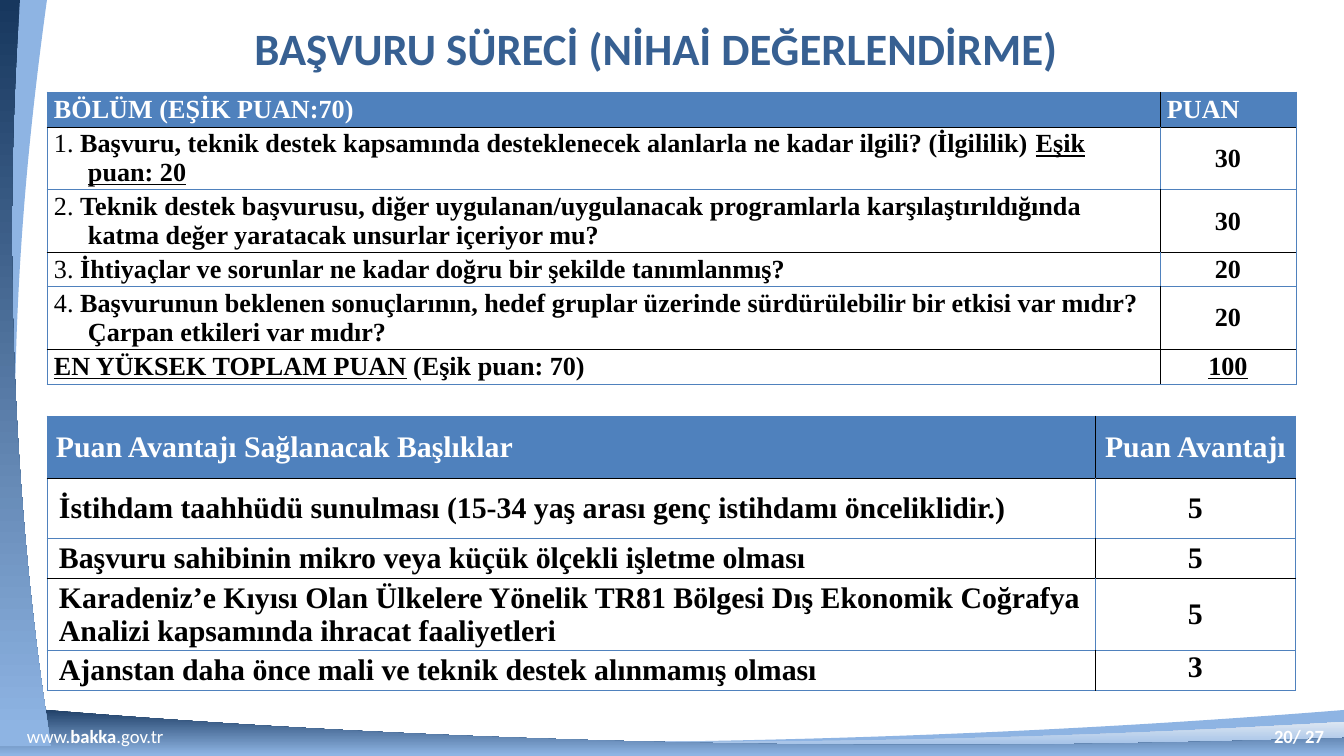
import dataclasses

import pptx
import pptx.dml.color
import pptx.enum.text
import pptx.oxml
import pptx.oxml.ns
import pptx.util

WIDE, HIGH = 1344, 756
SCALE = 9144000 / WIDE
BLUE, BLACK, WHITE = "4F81BD", "000000", "FFFFFF"
NAVY, SKY, PALE = "17375E", "8EB4E3", "DCE6F2"
SERIF, SANS = "Times New Roman", "Calibri"
ALIGN = pptx.enum.text.PP_ALIGN
ANCHOR = pptx.enum.text.MSO_ANCHOR


def emu(px: float) -> int:
    return pptx.util.Emu(round(px * SCALE))


def color(code: str) -> pptx.dml.color.RGBColor:
    return pptx.dml.color.RGBColor.from_string(code)


@dataclasses.dataclass
class Run:
    text: str
    bold: bool = True
    line: bool = False


@dataclasses.dataclass
class Style:
    size: int
    font: str
    color: str
    align: ALIGN = ALIGN.LEFT
    margin: int = 0
    indent: int = 0


@dataclasses.dataclass
class Wave:
    start: tuple
    out: tuple      # two controls and the end of the first curve
    edge: tuple     # straight corners
    back: tuple     # two controls of the curve back to the start
    stops: tuple    # (percent, colour) pairs; a single pair is solid
    angle: int = 0


@dataclasses.dataclass
class Grid:
    top: int
    cols: tuple
    rows: tuple
    pad: int
    size: int
    margin: int
    indent: int
    flat: str       # horizontal rules: B blue, K black
    mid: str        # inner vertical rule of each row
    cells: list


def bend(shape, step, points: tuple) -> None:
    """Turn a straight path step into a cubic curve."""
    dots = "".join(f'<a:pt x="{emu(x) - shape.left}" y="{emu(y) - shape.top}"/>'
                   for x, y in points)
    step.getparent().replace(step, pptx.oxml.parse_xml(
        f'<a:cubicBezTo {pptx.oxml.ns.nsdecls("a")}>{dots}</a:cubicBezTo>'))


def draw_wave(slide, wave: Wave) -> None:
    pen = slide.shapes.build_freeform(emu(wave.start[0]), emu(wave.start[1]))
    stops = (wave.out[2], *wave.edge, wave.start)
    pen.add_line_segments([(emu(x), emu(y)) for x, y in stops])
    shape = pen.convert_to_shape()
    steps = shape._element.xpath(".//a:lnTo")
    bend(shape, steps[0], wave.out)
    bend(shape, steps[len(stops) - 1], (*wave.back, wave.start))
    shape.shadow.inherit = False
    shape.line.fill.background()
    if len(wave.stops) == 1:
        shape.fill.solid()
        shape.fill.fore_color.rgb = color(wave.stops[0][1])
        return
    shape.fill.gradient()
    shape.fill.gradient_angle = wave.angle
    for stop, (place, code) in zip(shape.fill.gradient_stops, wave.stops):
        stop.position = place / 100
        stop.color.rgb = color(code)


def write(frame, runs: list, style: Style) -> None:
    para = frame.paragraphs[0]
    para.alignment = style.align
    if style.margin:
        props = para._p.get_or_add_pPr()
        props.set("marL", str(emu(style.margin)))
        props.set("indent", str(emu(style.indent)))
    for item in runs:
        run = para.add_run()
        run.text = item.text
        font = run.font
        font.size, font.name = pptx.util.Pt(style.size), style.font
        font.bold, font.underline = item.bold, item.line
        font.color.rgb = color(style.color)


def draw_text(slide, place: tuple, runs: list, style: Style, wrap: bool = True) -> None:
    frame = slide.shapes.add_textbox(*map(emu, place)).text_frame
    frame.margin_left = frame.margin_right = frame.margin_top = frame.margin_bottom = 0
    frame.word_wrap = wrap
    frame.vertical_anchor = ANCHOR.MIDDLE
    write(frame, runs, style)


def rule(cell, side: str, code: str) -> None:
    cell._tc.get_or_add_tcPr().append(pptx.oxml.parse_xml(
        f'<a:ln{side} {pptx.oxml.ns.nsdecls("a")} w="6350"><a:solidFill>'
        f'<a:srgbClr val="{code}"/></a:solidFill></a:ln{side}>'))


def draw_grid(slide, grid: Grid) -> None:
    table = slide.shapes.add_table(
        len(grid.rows), len(grid.cols), emu(47), emu(grid.top),
        emu(sum(grid.cols)), emu(sum(grid.rows))).table
    table.first_row = table.horz_banding = False
    for col, width in zip(table.columns, grid.cols):
        col.width = emu(width)
    tint = {"B": BLUE, "K": BLACK}
    for r, height in enumerate(grid.rows):
        table.rows[r].height = emu(height)
        walls = (BLUE, tint[grid.mid[r]], BLUE)
        for c, runs in enumerate(grid.cells[r]):
            cell = table.cell(r, c)
            cell.margin_left = cell.margin_right = emu(grid.pad)
            cell.margin_top = cell.margin_bottom = 0
            cell.vertical_anchor = ANCHOR.MIDDLE
            rule(cell, "L", walls[c])
            rule(cell, "R", walls[c + 1])
            rule(cell, "T", tint[grid.flat[r]])
            rule(cell, "B", tint[grid.flat[r + 1]])
            style = Style(grid.size, SERIF, BLACK if r else WHITE)
            if r:
                cell.fill.background()
            else:
                cell.fill.solid()
                cell.fill.fore_color.rgb = color(BLUE)
            if c and (r or grid is BONUS):
                style.align = ALIGN.CENTER
            elif r and not runs[0].line:
                style.margin, style.indent = grid.margin, grid.indent
            write(cell.text_frame, runs, style)
    if grid is BONUS:
        table.cell(len(grid.rows) - 1, 1).vertical_anchor = ANCHOR.TOP


def ask(number: int, text: str, *more: Run) -> list:
    return [Run(f"{number}. ", bold=False), Run(text), *more]


# Curved bands along the bottom and the left edge
FOOT, SIDE = ((0, HIGH), (WIDE, HIGH)), ((0, 746), (0, 0))
WAVES = [
    Wave((488, 743), ((293, 742), (145, 735), (0, 727)), (*FOOT, (WIDE, 710)),
         ((1082, 731), (808, 743)), ((0, SKY),)),
    Wave((671, 742), ((437, 742), (211, 735), (0, 722)), (*FOOT, (WIDE, 722)),
         ((1132, 735), (906, 742)), ((8, SKY), (100, PALE)), 90),
    Wave((929, 745), ((597, 745), (281, 731), (0, 706)), (*FOOT, (WIDE, 738)),
         ((1210, 742), (1071, 745)), ((0, NAVY), (98, SKY)), 270),
    Wave((15, 374), ((15, 503), (23, 629), (35, 746)), (*SIDE, (35, 0)),
         ((23, 117), (15, 243)), ((8, SKY), (100, PALE)), 90),
    Wave((15, 474), ((15, 582), (26, 665), (30, 746)), (*SIDE, (47, 0)),
         ((27, 145), (13, 297)), ((0, SKY),)),
    Wave((12, 230), ((12, 414), (26, 589), (51, 746)), (*SIDE, (20, 0)),
         ((15, 74), (12, 152)), ((0, NAVY), (98, SKY)), 270),
]

# Scores of each section
SCORE = Grid(92, (1113, 136), (35, 58, 58, 34, 57, 35), 7, 14, 34, -34, "BKBKBKB", "KBKBKK", [
    [[Run("BÖLÜM (EŞİK PUAN:70)")], [Run("PUAN")]],
    [ask(1, "Başvuru, teknik destek kapsamında desteklenecek alanlarla ne kadar ilgili? "
            "(İlgililik) ", Run("Eşik puan: 20", line=True)), [Run("30")]],
    [ask(2, "Teknik destek başvurusu, diğer uygulanan/uygulanacak programlarla "
            "karşılaştırıldığında katma değer yaratacak unsurlar içeriyor mu?"), [Run("30")]],
    [ask(3, "İhtiyaçlar ve sorunlar ne kadar doğru bir şekilde tanımlanmış?"), [Run("20")]],
    [ask(4, "Başvurunun beklenen sonuçlarının, hedef gruplar üzerinde sürdürülebilir bir "
            "etkisi var mıdır? Çarpan etkileri var mıdır?"), [Run("20")]],
    [[Run("EN YÜKSEK TOPLAM PUAN", line=True), Run(" (Eşik puan: 70)")],
     [Run("100", line=True)]],
])

# Extra points
BONUS = Grid(416, (1048, 201), (62, 61, 40, 66, 40), 9, 16, 3, 0, "BKBKBB", "KBKBK", [
    [[Run(title)], [Run(point)]] for title, point in (
        ("Puan Avantajı Sağlanacak Başlıklar", "Puan Avantajı"),
        ("İstihdam taahhüdü sunulması (15-34 yaş arası genç istihdamı önceliklidir.)", "5"),
        ("Başvuru sahibinin mikro veya küçük ölçekli işletme olması", "5"),
        ("Karadeniz’e Kıyısı Olan Ülkelere Yönelik TR81 Bölgesi Dış Ekonomik Coğrafya "
         "Analizi kapsamında ihracat faaliyetleri", "5"),
        ("Ajanstan daha önce mali ve teknik destek alınmamış olması", "3"))
])


def main() -> None:
    deck = pptx.Presentation()
    deck.slide_width, deck.slide_height = emu(WIDE), emu(HIGH)
    slide = deck.slides.add_slide(deck.slide_layouts[6])
    for wave in WAVES:
        draw_wave(slide, wave)
    # Footer and title
    draw_text(slide, (1272, 725, 54, 23), [Run("20/ 27")],
              Style(10, SANS, WHITE, ALIGN.CENTER), wrap=False)
    draw_text(slide, (27, 725, 180, 23), [Run("www.", False), Run("bakka"),
              Run(".gov.tr", False)], Style(10, SANS, WHITE))
    draw_text(slide, (111, 13, 1090, 69), [Run("BAŞVURU SÜRECİ (NİHAİ DEĞERLENDİRME)")],
              Style(24, SANS, "376092", ALIGN.CENTER))
    for grid in (SCORE, BONUS):
        draw_grid(slide, grid)
    deck.save("out.pptx")


if __name__ == "__main__":
    main()
